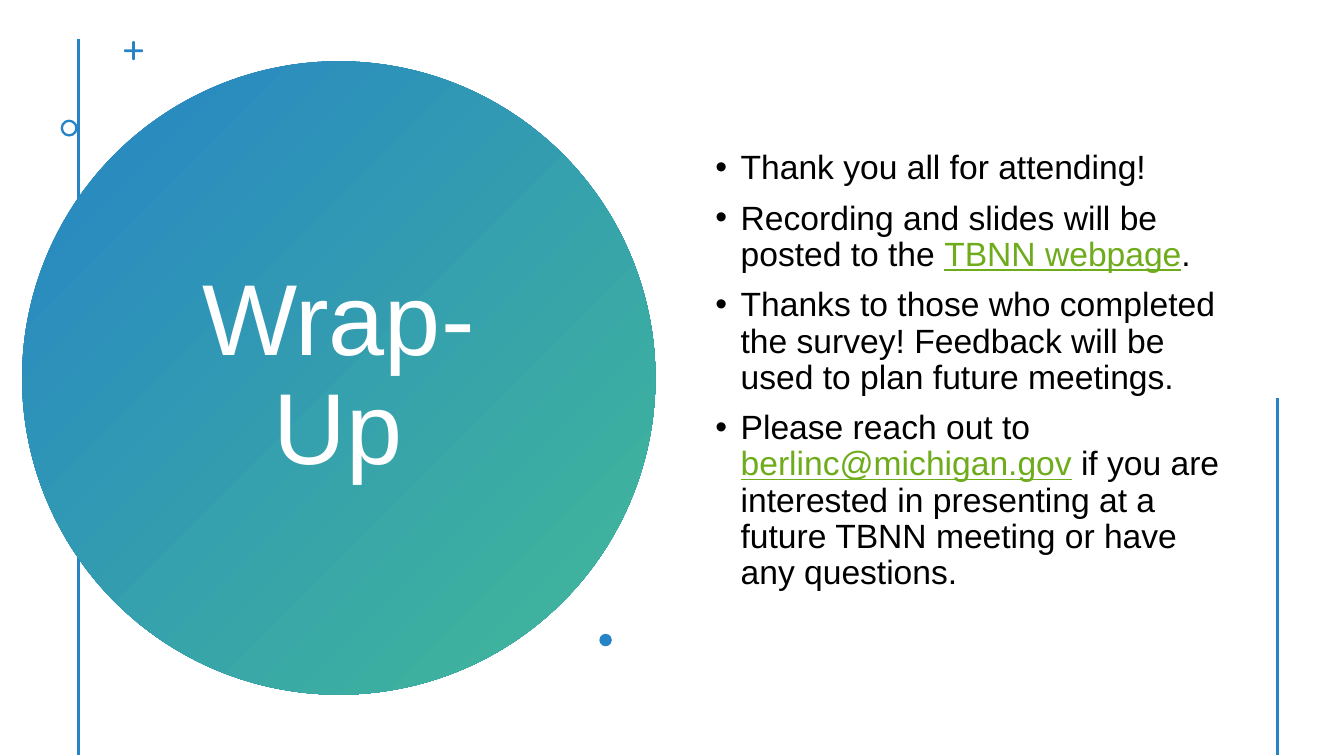
from lxml import etree
from pptx import Presentation
from pptx.dml.color import RGBColor
from pptx.enum import shapes, text
from pptx.oxml.ns import qn
from pptx.util import Pt

BLUE, GREEN, LINK, BLACK, WHITE = "2683C6", "42BA97", "6EAC1C", "000000", "FFFFFF"
FONT = "Arial"
TITLE = "Wrap-Up"
# Each bullet is a list of (words, colour)
BULLETS = [
    [("Thank you all for attending!", BLACK)],
    [("Recording and slides will be posted to the ", BLACK),
     ("TBNN webpage", LINK), (".", BLACK)],
    [("Thanks to those who completed the survey! Feedback will be used "
      "to plan future meetings.", BLACK)],
    [("Please reach out to ", BLACK), ("berlinc@michigan.gov", LINK),
     (" if you are interested in presenting at a future TBNN meeting "
      "or have any questions.", BLACK)],
]
# Lengths in points: (x, top, bottom)
LEFT_RULE = (56.16, 28, 539.5)
RIGHT_RULE = (912.4, 284.2, 539.5)
# Centre x, centre y, diameter
DISC = (242, 270, 452.4)
RING = (49.4, 91.5, 12.2)
DOT = (432.6, 457.2, 8.9)
PLUS = (95.4, 36.2, 13.6)
PLUS_STROKE = 2
TITLE_BOX = (98, 101.5, 287.3, 336.2)
BODY_BOX = (504, 30.2, 376.6, 470.2)
INDENT = 18


def colour(value):
    return RGBColor.from_string(value)


def apply(target, values):
    for name, value in values.items():
        setattr(target, name, value)


def add_rule(slide, x, top, bottom):
    rule = slide.shapes.add_connector(
        shapes.MSO_CONNECTOR.STRAIGHT, Pt(x), Pt(top), Pt(x), Pt(bottom))
    rule.line.color.rgb = colour(BLUE)
    rule.line.width = Pt(2)
    etree.SubElement(rule._element.spPr, qn("a:effectLst"))


def add_centred(slide, kind, x, y, width, height):
    shape = slide.shapes.add_shape(
        kind, Pt(x - width / 2), Pt(y - height / 2), Pt(width), Pt(height))
    shape.shadow.inherit = False
    shape.line.fill.background()
    shape.fill.solid()
    shape.fill.fore_color.rgb = colour(BLUE)
    return shape


def add_text(slide, box, paragraphs, size, paragraph_format, bulleted=False):
    frame = slide.shapes.add_textbox(*map(Pt, box)).text_frame
    apply(frame, {"word_wrap": True, "vertical_anchor": text.MSO_ANCHOR.MIDDLE})
    for index, runs in enumerate(paragraphs):
        paragraph = frame.add_paragraph() if index else frame.paragraphs[0]
        apply(paragraph, {"line_spacing": 0.9, **paragraph_format})
        if bulleted:
            properties = paragraph._p.get_or_add_pPr()
            properties.set("marL", str(Pt(INDENT)))
            properties.set("indent", str(-Pt(INDENT)))
            etree.SubElement(properties, qn("a:buFont"), typeface=FONT)
            etree.SubElement(properties, qn("a:buChar"), char="•")
        for words, shade in runs:
            run = paragraph.add_run()
            run.text = words
            apply(run.font, {"name": FONT, "size": Pt(size), "underline": shade == LINK})
            run.font.color.rgb = colour(shade)


def main():
    presentation = Presentation()
    apply(presentation, {"slide_width": Pt(960), "slide_height": Pt(540)})
    slide = presentation.slides.add_slide(presentation.slide_layouts[6])
    kinds = shapes.MSO_SHAPE

    add_rule(slide, *LEFT_RULE)
    add_rule(slide, *RIGHT_RULE)

    x, y, size = DISC
    disc = add_centred(slide, kinds.OVAL, x, y, size, size)
    disc.fill.gradient()
    disc.fill.gradient_angle = 315  # counter-clockwise: top left to bottom right
    for stop, shade, position in zip(disc.fill.gradient_stops, (BLUE, GREEN), (0, 1)):
        stop.color.rgb = colour(shade)
        stop.position = position

    x, y, size = PLUS
    for width, height in ((size, PLUS_STROKE), (PLUS_STROKE, size)):
        bar = add_centred(slide, kinds.ROUNDED_RECTANGLE, x, y, width, height)
        bar.adjustments[0] = 0.5

    x, y, size = RING
    ring = add_centred(slide, kinds.DONUT, x, y, size, size)
    ring.adjustments[0] = 0.14
    x, y, size = DOT
    add_centred(slide, kinds.OVAL, x, y, size, size)

    add_text(slide, TITLE_BOX, [[(TITLE, WHITE)]], 72,
             {"alignment": text.PP_ALIGN.CENTER})
    add_text(slide, BODY_BOX, BULLETS, 24, {"space_before": Pt(10)}, bulleted=True)
    presentation.save("out.pptx")


if __name__ == "__main__":
    main()
